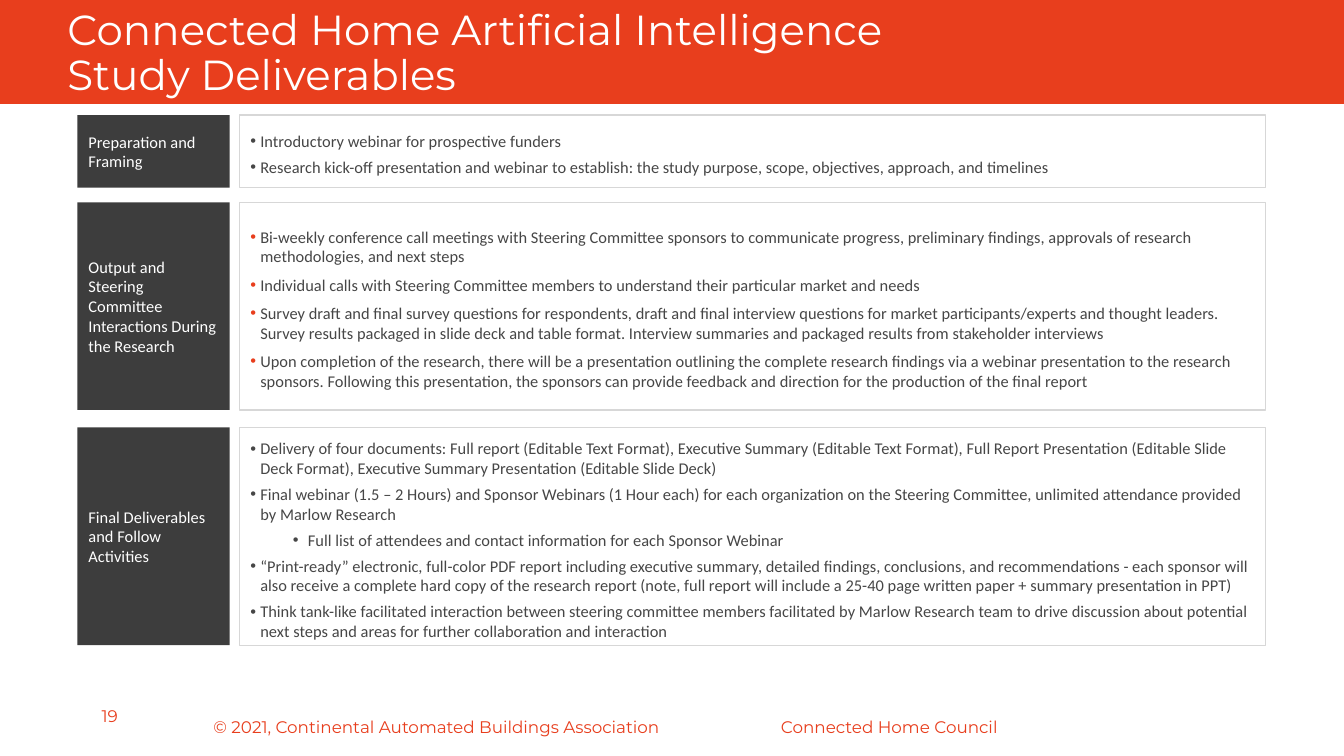
import pptx
import pptx.util
import pptx.dml.color
import pptx.enum.shapes
import pptx.enum.text
import lxml.etree

Cm, Pt = pptx.util.Cm, pptx.util.Pt
ANCHOR = pptx.enum.text.MSO_ANCHOR
RED, DARK, GREY, EDGE, WHITE = "E83E1D", "3D3D3D", "464646", "D7D7D7", "FFFFFF"
NS = "{http://schemas.openxmlformats.org/drawingml/2006/main}"

# Each row: top, height, label, space between items, bullet colour, anchor,
# and items as (level, text)
ROWS = [
    (2.9, 1.83, "Preparation and Framing", 4.5, GREY, ANCHOR.MIDDLE, [
        (0, "Introductory webinar for prospective funders"),
        (0, "Research kick-off presentation and webinar to establish: the study purpose, "
            "scope, objectives, approach, and timelines"),
    ]),
    (5.1, 5.23, "Output and Steering Committee Interactions During the Research",
     6.2, RED, ANCHOR.MIDDLE, [
        (0, "Bi-weekly conference call meetings with Steering Committee sponsors to "
            "communicate progress, preliminary findings, approvals of research "
            "methodologies, and next steps"),
        (0, "Individual calls with Steering Committee members to understand their "
            "particular market and needs"),
        (0, "Survey draft and final survey questions for respondents, draft and final "
            "interview questions for market participants/experts and thought leaders. "
            "Survey results packaged in slide deck and table format. Interview summaries "
            "and packaged results from stakeholder interviews"),
        (0, "Upon completion of the research, there will be a presentation outlining the "
            "complete research findings via a webinar presentation to the research "
            "sponsors. Following this presentation, the sponsors can provide feedback and "
            "direction for the production of the final report"),
    ]),
    (10.77, 5.49, "Final Deliverables and Follow Activities", 4.5, GREY, ANCHOR.TOP, [
        (0, "Delivery of four documents: Full report (Editable Text Format), Executive "
            "Summary (Editable Text Format), Full Report Presentation (Editable "
            "Slide Deck Format), Executive Summary Presentation (Editable Slide Deck)"),
        (0, "Final webinar (1.5 – 2 Hours) and Sponsor Webinars (1 Hour each) for each "
            "organization on the Steering Committee, unlimited attendance provided by "
            "Marlow Research"),
        (1, "Full list of attendees and contact information for each Sponsor Webinar"),
        (0, "“Print-ready” electronic, full-color PDF report including executive summary, "
            "detailed findings, conclusions, and recommendations - each sponsor will also "
            "receive a complete hard copy of the research report (note, full report will "
            "include a 25-40 page written paper + summary presentation in PPT)"),
        (0, "Think tank-like facilitated interaction between steering committee members "
            "facilitated by Marlow Research team to drive discussion about potential next "
            "steps and areas for further collaboration and interaction"),
    ]),
]

# Footer texts: left, top, width, text, anchor
NOTES = [
    (5.13, 17.81, 11.86, "© 2021, Continental Automated Buildings Association", ANCHOR.MIDDLE),
    (19.43, 17.81, 6.07, "Connected Home Council", ANCHOR.MIDDLE),
    (2.31, 17.65, 1.73, "19", ANCHOR.TOP),
]


def tint(target, code):
    """Colour a fill or a font."""
    if hasattr(target, "solid"):
        target.solid()
        target.fore_color.rgb = pptx.dml.color.RGBColor.from_string(code)
    else:
        target.color.rgb = pptx.dml.color.RGBColor.from_string(code)


def place(shape, left, top, width, height):
    shape.left, shape.top = Cm(left), Cm(top)
    shape.width, shape.height = Cm(width), Cm(height)


def frame(shape, anchor, pads):
    text = shape.text_frame
    text.word_wrap = True
    text.auto_size = pptx.enum.text.MSO_AUTO_SIZE.NONE
    text.vertical_anchor = anchor
    (text.margin_left, text.margin_top,
     text.margin_right, text.margin_bottom) = map(Cm, pads)
    return text


def style(para, size, face, code):
    para.alignment = pptx.enum.text.PP_ALIGN.LEFT
    for run in para.runs:
        run.font.size, run.font.name, run.font.bold = Pt(size), face, False
        tint(run.font, code)


def block(slide, left, top, width, height, code):
    shape = slide.shapes.add_shape(
        pptx.enum.shapes.MSO_SHAPE.RECTANGLE, Cm(left), Cm(top), Cm(width), Cm(height))
    shape.shadow.inherit = False
    tint(shape.fill, code)
    shape.line.fill.background()
    return shape


def bullet(para, level, code):
    props = para._p.get_or_add_pPr()
    left, hang = (1.45, 0.38) if level else (0.25, 0.25)
    props.set("marL", str(Cm(left)))
    props.set("indent", str(-Cm(hang)))
    hue = lxml.etree.SubElement(props, NS + "buClr")
    lxml.etree.SubElement(hue, NS + "srgbClr", val=code)
    lxml.etree.SubElement(props, NS + "buFont", typeface="Arial")
    lxml.etree.SubElement(props, NS + "buChar", char="•")


def banner(slide):
    bar = block(slide, 0, 0, 33.87, 2.62, RED)
    slide.shapes._spTree.insert(2, bar._element)  # behind the title
    title = slide.shapes.title
    place(title, 1.7, 0.23, 21.67, 1.07)
    text = frame(title, ANCHOR.TOP, (0, 0, 0, 0))
    text.text = "Connected Home Artificial Intelligence Study Deliverables"
    para = text.paragraphs[0]
    para.line_spacing = 0.9
    style(para, 30, "Montserrat", WHITE)


def label(slide, top, height, words):
    shape = block(slide, 1.95, top, 3.84, height, DARK)
    text = frame(shape, ANCHOR.MIDDLE, (0.28, 0.15, 0.28, 0.15))
    text.text = words
    style(text.paragraphs[0], 11.7, "Calibri", WHITE)


def panel(body, top, height, gap, dot, anchor, items):
    place(body, 6.03, top, 25.86, height)
    tint(body.fill, WHITE)
    tint(body.line.fill, EDGE)
    body.line.width = Pt(1)
    text = frame(body, anchor, (0.28, 0.28, 0.28, 0.15))
    text.text = "\n".join(words for _, words in items)
    for index, (para, (level, _)) in enumerate(zip(text.paragraphs, items)):
        bullet(para, level, dot)
        para.level = level
        para.space_before = Pt(gap if index else 0)
        style(para, 11.7, "Calibri", GREY)


def note(slide, left, top, width, words, anchor):
    box = slide.shapes.add_textbox(Cm(left), Cm(top), Cm(width), Cm(1))
    text = frame(box, anchor, (0.25, 0.13, 0.25, 0.13))
    text.text = words
    style(text.paragraphs[0], 12, "Montserrat", RED)


def main():
    deck = pptx.Presentation()
    deck.slide_width, deck.slide_height = Cm(33.87), Cm(19.05)
    slide = deck.slides.add_slide(deck.slide_layouts[4])

    # Title band
    banner(slide)

    # Rows: dark label and list panel; the spare placeholder goes
    *bodies, spare = [slide.placeholders[key] for key in (1, 2, 4, 3)]
    spare._element.getparent().remove(spare._element)
    for body, (top, height, words, gap, dot, anchor, items) in zip(bodies, ROWS):
        label(slide, top, height, words)
        panel(body, top, height, gap, dot, anchor, items)

    # Footer
    for entry in NOTES:
        note(slide, *entry)

    deck.save("out.pptx")


if __name__ == "__main__":
    main()
